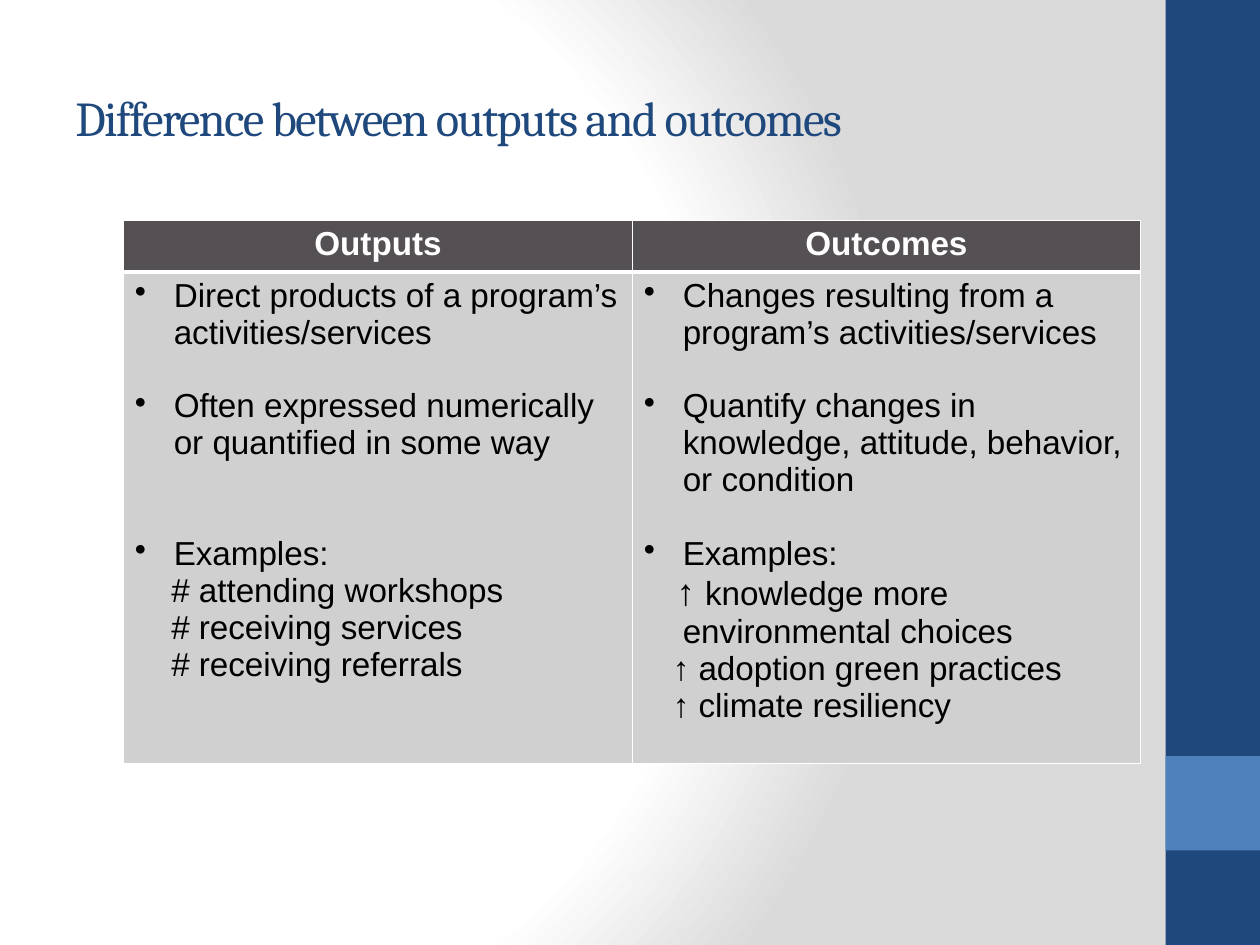
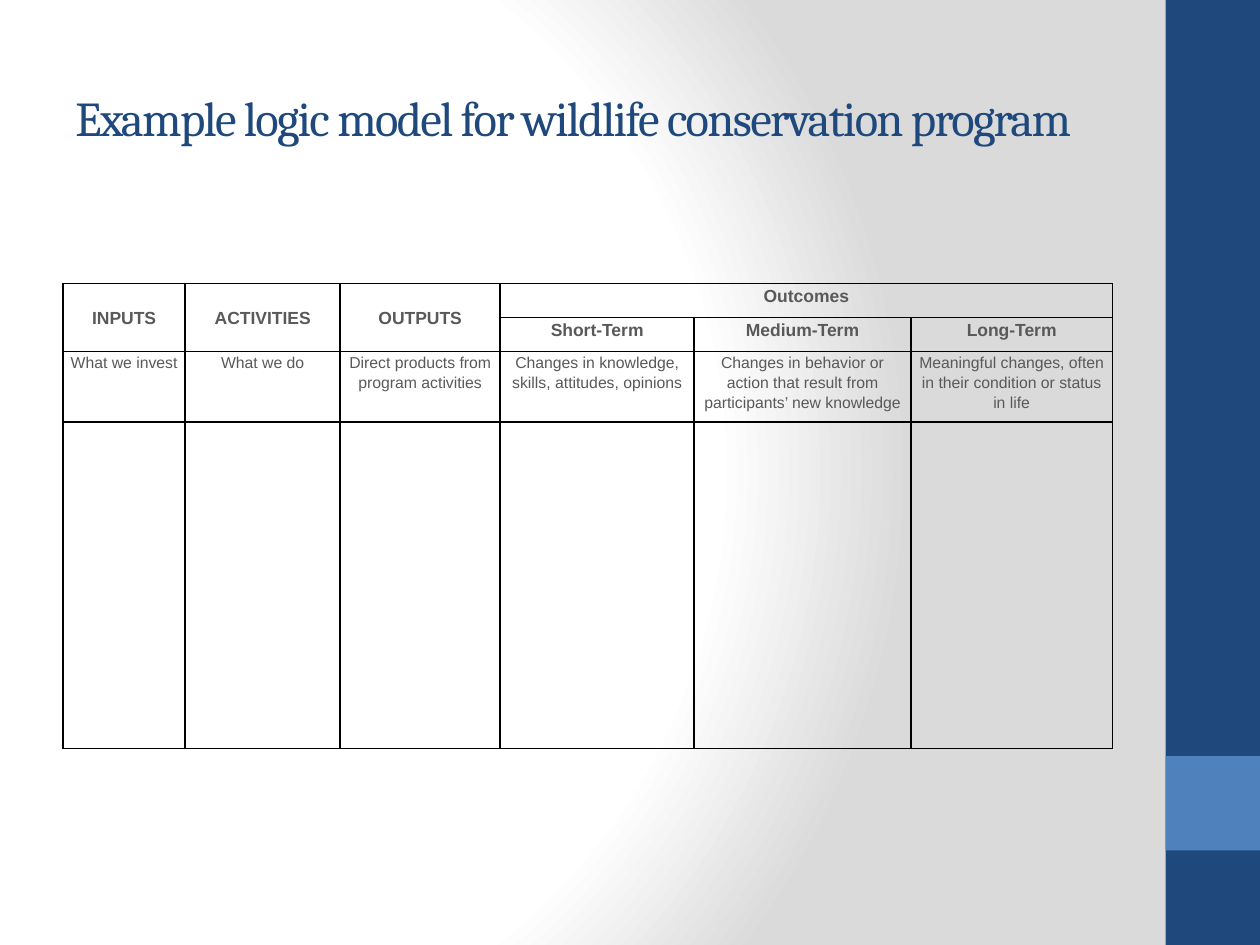
import pptx
import pptx.dml.color
import pptx.enum.shapes
import pptx.enum.text
import pptx.oxml
import pptx.oxml.ns
import pptx.util

PX = 9144
COLORS = {
    "navy": "1F497D", "blue": "4F81BD", "white": "FFFFFF", "shade": "DADADA",
    "header": "555053", "body": "D1D0D1", "black": "000000", "gray": "595959",
}
ALIGN = pptx.enum.text.PP_ALIGN
ANCHOR = pptx.enum.text.MSO_ANCHOR
NS = pptx.oxml.ns.nsdecls("a")


class Deck:
    """Slide builder that holds the shared style and the current slide."""

    def __init__(self):
        self.prs = pptx.Presentation()
        self.prs.slide_width, self.prs.slide_height = 1000 * PX, 750 * PX
        self.s = None

    def rgb(self, color):
        return pptx.dml.color.RGBColor.from_string(COLORS[color])

    def slide(self, title):
        self.s = self.prs.slides.add_slide(self.prs.slide_layouts[6])
        self.backdrop()
        self.rect(925, 0, 75, 750, "navy")
        self.rect(925, 600, 75, 75, "blue")
        self.title(title)

    def backdrop(self):
        self.s.background.fill.gradient()
        bg = self.s.background.fill
        stops = "".join(
            f'<a:gs pos="{pos}000"><a:srgbClr val="{COLORS[color]}"/></a:gs>'
            for pos, color in ((0, "white"), (75, "white"), (100, "shade")))
        grad = pptx.oxml.parse_xml(
            f'<a:gradFill {NS} rotWithShape="1"><a:gsLst>{stops}</a:gsLst>'
            '<a:path path="circle"><a:fillToRect l="20000" t="50000" r="100000" b="50000"/>'
            '</a:path></a:gradFill>')
        old = self.s.element.find(".//" + pptx.oxml.ns.qn("a:gradFill"))
        old.getparent().replace(old, grad)

    def rect(self, x, y, w, h, color):
        sp = self.s.shapes.add_shape(
            pptx.enum.shapes.MSO_SHAPE.RECTANGLE, x * PX, y * PX, w * PX, h * PX)
        sp.shadow.inherit = False
        sp.fill.solid()
        sp.fill.fore_color.rgb = self.rgb(color)
        sp.line.fill.background()

    def title(self, text):
        sp = self.s.shapes.add_textbox(50 * PX, 30 * PX, 833 * PX, 125 * PX)
        tf = sp.text_frame
        tf.word_wrap = True
        tf.vertical_anchor = ANCHOR.MIDDLE
        r = self.run(tf.paragraphs[0], text, 27.8, "navy", font="Cambria")
        r.font._element.set("spc", "-100")

    def run(self, p, text, size, color, bold=False, font="Arial"):
        r = p.add_run()
        r.text = text
        r.font.size = pptx.util.Pt(size)
        r.font.name = font
        r.font.bold = bold
        r.font.color.rgb = self.rgb(color)
        return r

    def table(self, x, y, cols, rows):
        frame = self.s.shapes.add_table(
            len(rows), len(cols), x * PX, y * PX, sum(cols) * PX, sum(rows) * PX)
        table = frame.table
        for col, w in zip(table.columns, cols):
            col.width = w * PX
        for row, h in zip(table.rows, rows):
            row.height = h * PX
        return table

    def cell(self, cell, margins, fill, line, widths=(1, 1, 1, 1)):
        cell.margin_left = cell.margin_right = margins[0] * PX
        cell.margin_top = cell.margin_bottom = margins[1] * PX
        if fill:
            cell.fill.solid()
            cell.fill.fore_color.rgb = self.rgb(fill)
        else:
            cell.fill.background()
        tc_pr = cell._tc.get_or_add_tcPr()
        for i, (side, width) in enumerate(zip("LRTB", widths)):
            tc_pr.insert(i, pptx.oxml.parse_xml(
                f'<a:ln{side} {NS} w="{width * 12700}"><a:solidFill>'
                f'<a:srgbClr val="{COLORS[line]}"/></a:solidFill></a:ln{side}>'))
        return cell.text_frame

    def indent(self, p, left, first, bullet=False):
        p_pr = p._p.get_or_add_pPr()
        p_pr.set("marL", str(left * PX))
        p_pr.set("indent", str(first * PX))
        if bullet:
            p_pr.append(pptx.oxml.parse_xml(f'<a:buChar {NS} char="•"/>'))


def differences(deck):
    deck.slide("Difference between outputs and outcomes")
    table = deck.table(98, 175, (404, 403), (41, 390))
    columns = (
        ("Outputs",
         (("Direct products of a program’s activities/services", 0),
          ("Often expressed numerically or quantified in some way", 1),
          ("Examples:", 2)),
         (("# attending workshops", -2), ("# receiving services", -2),
          ("# receiving referrals", -2))),
        ("Outcomes",
         (("Changes resulting from a program’s activities/services", 0),
          ("Quantify changes in knowledge, attitude, behavior, or condition", 1),
          ("Examples:", 1)),
         (("↑ knowledge more environmental choices", -5),
          ("↑ adoption green practices", -8), ("↑ climate resiliency", -8))),
    )
    for i, (heading, points, examples) in enumerate(columns):
        tf = deck.cell(table.cell(0, i), (9, 4), "header", "white", (1, 1, 1, 3))
        p = tf.paragraphs[0]
        p.alignment = ALIGN.CENTER
        deck.run(p, heading, 19, "white", True)

        tf = deck.cell(table.cell(1, i), (9, 4), "body", "white", (1, 1, 3, 1))
        p = tf.paragraphs[0]
        for text, gap in points:
            p = p if gap == 0 else tf.add_paragraph()
            p.space_before = pptx.util.Pt(21 * gap)
            deck.indent(p, 31, -31, True)
            deck.run(p, text, 19, "black")
        for text, first in examples:
            p = tf.add_paragraph()
            deck.indent(p, 31, first)
            mark, rest = text[:2], text[2:]
            deck.run(p, mark, 21 if first == -5 else 19, "black")
            deck.run(p, rest, 19, "black")


def logic_model(deck):
    deck.slide("Example logic model for wildlife conservation program")
    table = deck.table(50, 225, (97, 123, 127, 154, 172, 160), (27, 27, 56, 259))
    rows = (
        ("INPUTS", "ACTIVITIES", "OUTPUTS", "Outcomes", "", ""),
        ("", "", "", "Short-Term", "Medium-Term", "Long-Term"),
        ("What we invest", "What we do", "Direct products from program activities",
         "Changes in knowledge, skills, attitudes, opinions",
         "Changes in behavior or action that result from participants’ new knowledge",
         "Meaningful changes, often in their condition or status in life"),
        ("",) * 6,
    )
    for i, row in enumerate(rows):
        for j, text in enumerate(row):
            tf = deck.cell(table.cell(i, j), (6, 0), None, "black")
            p = tf.paragraphs[0]
            p.alignment = ALIGN.CENTER
            p.line_spacing = 1.15
            p.font.size = pptx.util.Pt(10 if i < 2 else 9)
            if text:
                deck.run(p, text, 10 if i < 2 else 9, "gray", i < 2)
    for j in range(3):
        table.cell(0, j).merge(table.cell(1, j))
        table.cell(0, j).vertical_anchor = ANCHOR.MIDDLE
    table.cell(0, 3).merge(table.cell(0, 5))


def main():
    deck = Deck()
    differences(deck)
    logic_model(deck)
    deck.prs.save("out.pptx")


if __name__ == "__main__":
    main()
